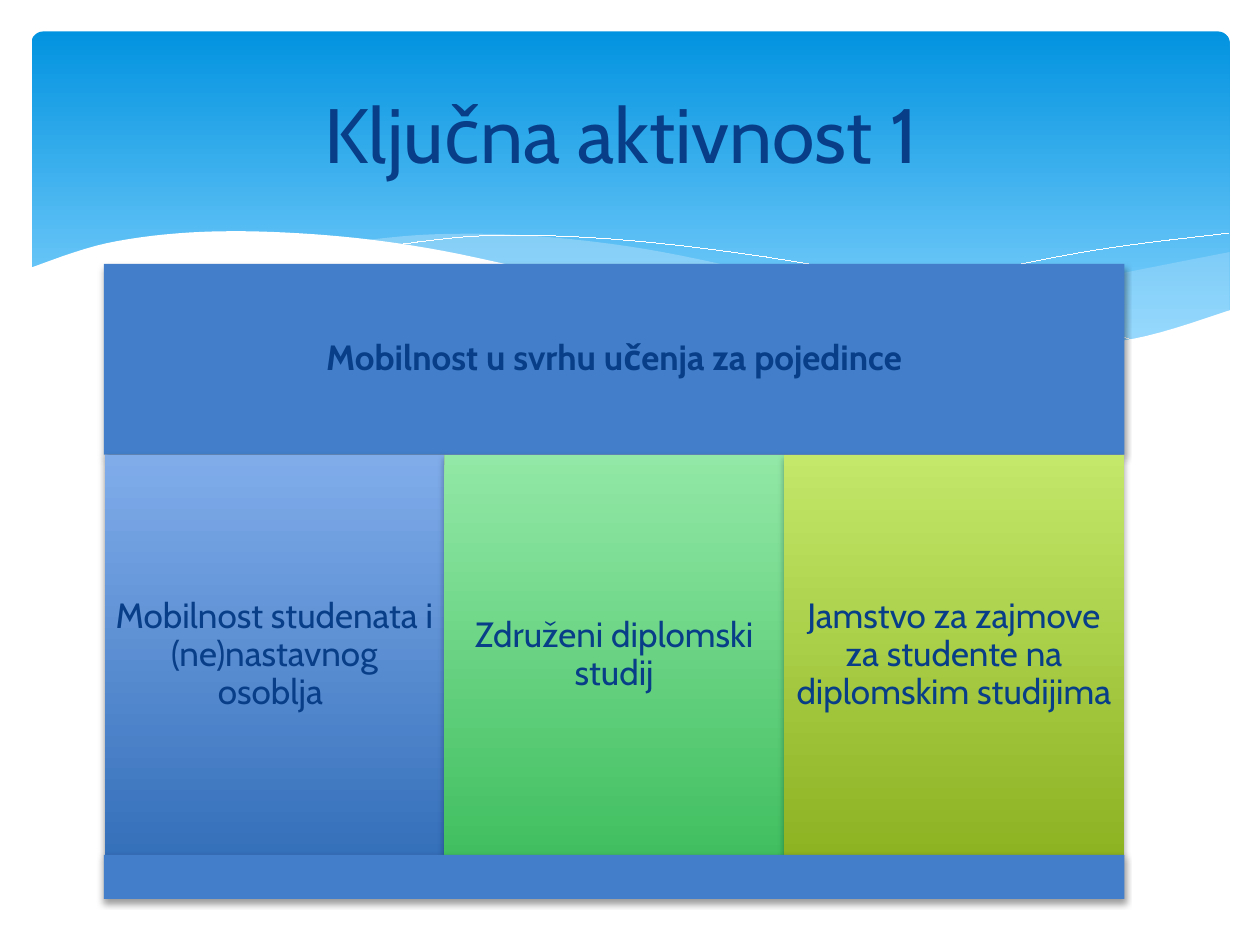
from lxml import etree
from pptx import Presentation
from pptx.dml.color import RGBColor
from pptx.enum.shapes import MSO_SHAPE
from pptx.enum.text import MSO_ANCHOR, PP_ALIGN
from pptx.oxml import parse_xml
from pptx.oxml.ns import nsdecls, qn
from pptx.util import Inches, Pt

RECTANGLE, ROUNDED = MSO_SHAPE.RECTANGLE, MSO_SHAPE.ROUNDED_RECTANGLE
CENTER, MIDDLE = PP_ALIGN.CENTER, MSO_ANCHOR.MIDDLE
COLUMNS, ROWS = 1000, 750
CURVE_STEPS = 8
FONT = "Cabin"

NAVY = RGBColor(0x07, 0x3E, 0x87)
BAND_BLUE = RGBColor(0x42, 0x7E, 0xCA)
WHITE = RGBColor(0xFF, 0xFF, 0xFF)
MIST = RGBColor(0xC6, 0xE7, 0xFC)
SKY = (RGBColor(0x02, 0x93, 0xE0), RGBColor(0x83, 0xD3, 0xFE))
BLUE = (RGBColor(0x80, 0xAC, 0xEA), RGBColor(0x35, 0x70, 0xBA))
GREEN = (RGBColor(0x92, 0xE8, 0xA6), RGBColor(0x41, 0xBF, 0x60))
LIME = (RGBColor(0xC3, 0xE8, 0x6A), RGBColor(0x8D, 0xB2, 0x22))


def curve(*anchors):
    """Sample a smooth Catmull-Rom curve that passes through every anchor."""
    def blend(before, start, end, after, t):
        return start + t / 2 * (
            end - before
            + t * (2 * before - 5 * start + 4 * end - after)
            + t * t * (3 * (start - end) + after - before))

    padded = (anchors[0], *anchors, anchors[-1])
    points = [
        tuple(blend(*axis, step / CURVE_STEPS) for axis in zip(*padded[i:i + 4]))
        for i in range(len(anchors) - 1)
        for step in range(CURVE_STEPS)]
    return points + [anchors[-1]]


def write_text(shape, text, size=20, bold=False, inset=6, spacing=0.9):
    """Write one centred paragraph into a shape."""
    frame = shape.text_frame
    frame.word_wrap = True
    frame.vertical_anchor = MIDDLE
    frame.margin_left = frame.margin_right = Pt(inset)
    frame.margin_top = frame.margin_bottom = Pt(inset)
    paragraph = frame.paragraphs[0]
    paragraph.alignment = CENTER
    paragraph.line_spacing = spacing
    run = paragraph.add_run()
    run.text = text
    run.font.name, run.font.size, run.font.bold = FONT, Pt(size), bold
    run.font.color.rgb = NAVY


class SlideBuilder:
    """Draw styled elements on a slide measured in grid columns and rows."""

    def __init__(self, deck):
        self.slide = deck.slides.add_slide(deck.slide_layouts[6])
        self.shapes = self.slide.shapes
        self.cell_width = deck.slide_width / COLUMNS
        self.cell_height = deck.slide_height / ROWS

    def place(self, column, row, columns, rows):
        """Turn a grid area into slide lengths."""
        return (round(column * self.cell_width), round(row * self.cell_height),
                round(columns * self.cell_width), round(rows * self.cell_height))

    def block(self, area, fill, kind=RECTANGLE, fade_end=1.0, shadow=True):
        """Draw a preset shape with a plain or vertical gradient fill."""
        shape = self.shapes.add_shape(kind, *self.place(*area))
        shape.line.fill.background()
        shape.shadow.inherit = False
        if isinstance(fill, RGBColor):
            shape.fill.solid()
            shape.fill.fore_color.rgb = fill
        else:
            shape.fill.gradient()
            shape.fill.gradient_angle = 270
            for stop, color, position in zip(shape.fill.gradient_stops, fill, (0, fade_end)):
                stop.color.rgb, stop.position = color, position
        if shadow:
            effects = shape._element.spPr.find(qn("a:effectLst"))
            effects.append(parse_xml(
                f'<a:outerShdw {nsdecls("a")} blurRad="{Pt(4)}" dist="{Pt(2)}" dir="5400000" '
                'rotWithShape="0"><a:srgbClr val="000000"><a:alpha val="38000"/>'
                '</a:srgbClr></a:outerShdw>'))
        return shape

    def outline(self, points, close):
        """Build a freeform through grid points."""
        sub_cells = 100
        scaled = [(x * sub_cells, y * sub_cells) for x, y in points]
        builder = self.shapes.build_freeform(
            *scaled[0], scale=(self.cell_width / sub_cells, self.cell_height / sub_cells))
        builder.add_line_segments(scaled[1:], close=close)
        shape = builder.convert_to_shape()
        shape.shadow.inherit = False
        return shape

    def wave(self, edges, color, opacity=100):
        """Draw a filled wave bounded by successive edges."""
        shape = self.outline([point for edge in edges for point in edge], True)
        shape.line.fill.background()
        shape.fill.solid()
        shape.fill.fore_color.rgb = color
        if opacity < 100:
            tint = shape._element.spPr.find(qn("a:solidFill"))[0]
            etree.SubElement(tint, qn("a:alpha"), val=str(opacity * 1000))

    def crest(self, edge):
        """Draw a white hairline along a wave."""
        shape = self.outline(edge, False)
        shape.fill.background()
        shape.line.color.rgb = WHITE
        shape._element.spPr.find(qn("a:ln")).set("w", "0")

    def title(self, area, text):
        """Write the slide title."""
        box = self.shapes.add_textbox(*self.place(*area))
        write_text(box, text, size=44, spacing=1.0)


def draw_header(page):
    """Draw the sky panel and the waves that cut its lower edge."""
    panel = page.block((25, 25, 951, 270), SKY, ROUNDED, fade_end=0.9, shadow=False)
    panel.adjustments[0] = 0.034

    right_top = curve((976, 200), (861, 223), (753, 248), (661, 265))
    right_bottom = curve((661, 265), (745, 275), (835, 277), (913, 267), (976, 247))
    page.wave([right_top, right_bottom], MIST, 29)

    middle_top = curve((893, 273), (775, 254), (629, 222), (514, 198),
                       (420, 187), (344, 186), (286, 191))
    middle_bottom = curve((286, 191), (383, 207), (491, 232), (601, 255),
                          (709, 272), (807, 278), (893, 273))
    page.wave([middle_top, middle_bottom], MIST, 40)

    page.crest(curve((309, 195), (387, 187), (489, 190), (608, 204),
                     (727, 226), (831, 251), (907, 272)))
    page.crest(curve((613, 257), (748, 223), (866, 199), (975, 185)))

    left, right, bottom = 23, 977, 329
    shoreline = curve((right, 246), (899, 269), (809, 277), (688, 268), (579, 250),
                      (447, 220), (340, 197), (250, 186), (161, 184), (85, 193), (left, 213))
    page.wave([shoreline, [(left, bottom), (right, bottom)]], WHITE)


def draw_activities(page):
    """Stack the heading band, a row of equal cards and the closing band."""
    left, top, width = 82.5, 209.5, 810
    heading_height, card_height, footer_height = 151.5, 317.5, 35
    cards_top = top + heading_height
    card_inset = 0.5
    activities = [
        ("Mobilnost studenata i (ne)nastavnog osoblja ", BLUE),
        ("Združeni diplomski studij", GREEN),
        ("Jamstvo za zajmove za studente na diplomskim studijima", LIME)]
    card_width = (width - 2 * card_inset) / len(activities)

    heading = page.block((left, top, width, heading_height), BAND_BLUE)
    write_text(heading, "Mobilnost u svrhu učenja za pojedince", bold=True)
    for index, (activity, fade) in enumerate(activities):
        card_left = left + card_inset + index * card_width
        card = page.block((card_left, cards_top, card_width, card_height), fade)
        write_text(card, activity)
    page.block((left, cards_top + card_height, width, footer_height), BAND_BLUE)


def main():
    """Build and save the slide."""
    deck = Presentation()
    deck.slide_width, deck.slide_height = Inches(10), Inches(7.5)
    page = SlideBuilder(deck)
    draw_header(page)
    draw_activities(page)
    page.title((50, 37, 900, 137), "Ključna aktivnost 1 ")
    deck.save("out.pptx")


if __name__ == "__main__":
    main()
